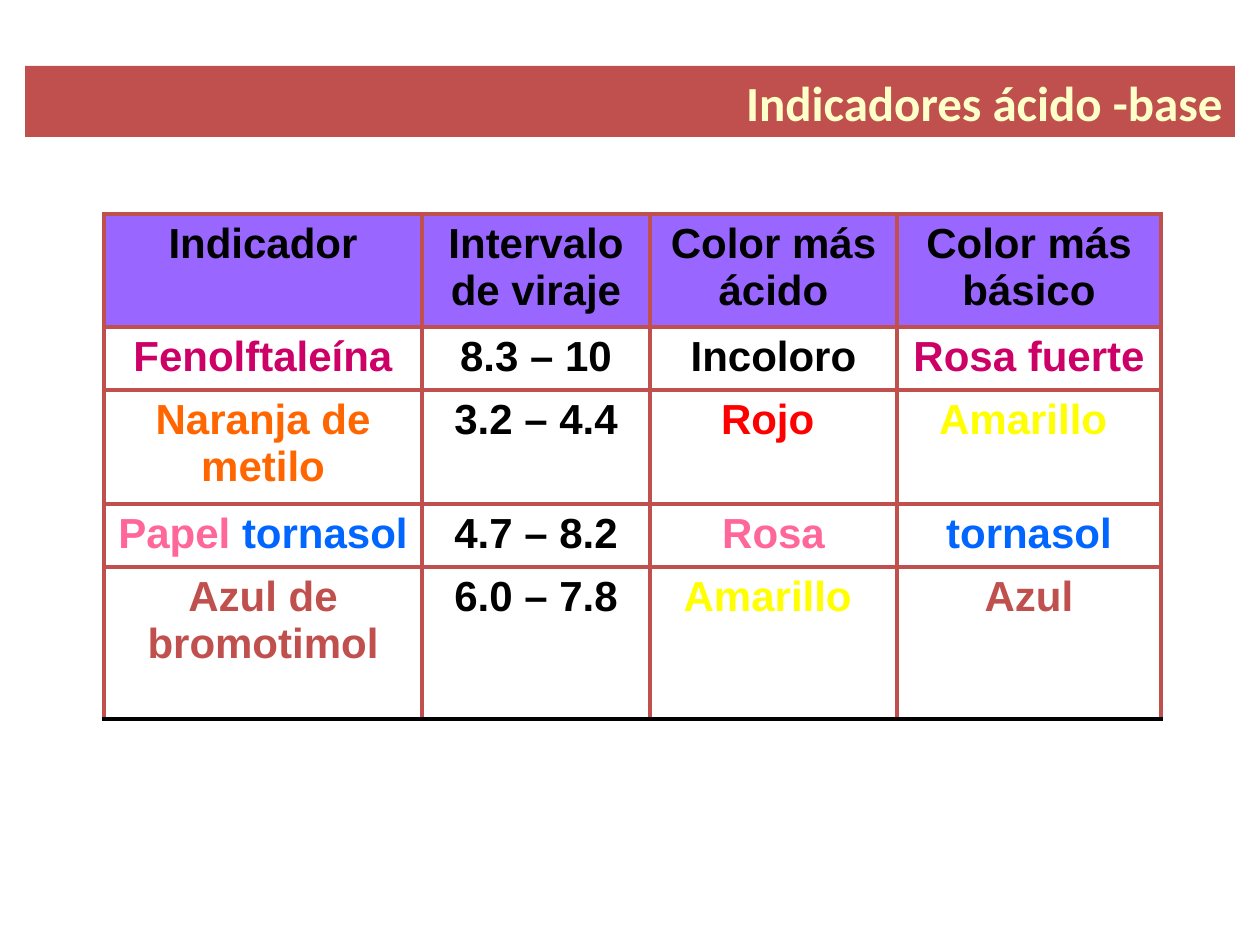
import pptx
import pptx.dml.color
import pptx.enum.text
import pptx.oxml.ns
import pptx.util
from lxml import etree

COLORS = {
    "brick": "C0504D", "cream": "FFFFC9", "violet": "9966FF", "white": "FFFFFF",
    "black": "000000", "magenta": "CC0066", "orange": "FF6600", "red": "FF0000",
    "yellow": "FFFF00", "pink": "FF6699", "blue": "0066FF",
}
PX_PER_INCH = 126
ALIGN = pptx.enum.text.PP_ALIGN


def px(n):
    return pptx.util.Emu(round(n * 914400 / PX_PER_INCH))


def rgb(name):
    return pptx.dml.color.RGBColor.from_string(COLORS[name])


class Deck:
    """Holds the style and the current slide."""
    title_font, title_size = "Calibri", 28
    table_font, table_size = "Arial", 24

    def __init__(self):
        self.prs = pptx.Presentation()
        self.prs.slide_width, self.prs.slide_height = px(1260), px(945)
        self.slide = self.prs.slides.add_slide(self.prs.slide_layouts[5])

    def format_run(self, r, font, size, color):
        r.font.name, r.font.size, r.font.bold = font, pptx.util.Pt(size), True
        r.font.color.rgb = rgb(color)

    def title(self, text, x, y, w, h):
        sp = self.slide.shapes.title
        sp.left, sp.top, sp.width, sp.height = px(x), px(y), px(w), px(h)
        sp.fill.solid()
        sp.fill.fore_color.rgb = rgb("brick")
        tf = sp.text_frame
        tf.text = text
        tf.word_wrap = True
        tf.auto_size = pptx.enum.text.MSO_AUTO_SIZE.NONE
        tf.vertical_anchor = pptx.enum.text.MSO_ANCHOR.MIDDLE
        p = tf.paragraphs[0]
        p.alignment = ALIGN.RIGHT
        self.format_run(p.runs[0], self.title_font, self.title_size, "cream")

    def border(self, cell, side, color, width):
        qn = pptx.oxml.ns.qn
        ln = etree.SubElement(cell._tc.get_or_add_tcPr(), qn("a:ln" + side),
                              w=str(pptx.util.Pt(width)))
        fill = etree.SubElement(ln, qn("a:solidFill"))
        etree.SubElement(fill, qn("a:srgbClr"), val=COLORS[color])

    def cell(self, cell, runs, fill, last):
        # Borders come before the fill in the cell properties
        for side in "LRTB":
            if last and side == "B":
                self.border(cell, side, "black", 2.25)
            else:
                self.border(cell, side, "brick", 3)
        cell.fill.solid()
        cell.fill.fore_color.rgb = rgb(fill)
        p = cell.text_frame.paragraphs[0]
        p.alignment = ALIGN.CENTER
        for text, color in runs:
            r = p.add_run()
            r.text = text
            self.format_run(r, self.table_font, self.table_size, color)

    def table(self, rows, x, y, widths, heights):
        table = self.slide.shapes.add_table(
            len(rows), len(widths), px(x), px(y),
            px(sum(widths)), px(sum(heights))).table
        table.horz_banding = False
        for col, w in zip(table.columns, widths):
            col.width = px(w)
        for row, h in zip(table.rows, heights):
            row.height = px(h)
        for i, row in enumerate(rows):
            for j, runs in enumerate(row):
                self.cell(table.cell(i, j), runs, "white" if i else "violet",
                          i == len(rows) - 1)


# Each cell is a list of (text, colour) runs
HEADERS = ["Indicador", "Intervalo de viraje", "Color más ácido", "Color más básico"]
INDICATORS = [
    [[("Fenolftaleína", "magenta")], [("8.3 – 10", "black")],
     [("Incoloro", "black")], [("Rosa fuerte", "magenta")]],
    [[("Naranja de metilo", "orange")], [("3.2 – 4.4", "black")],
     [("Rojo ", "red")], [("Amarillo ", "yellow")]],
    [[("Papel ", "pink"), ("tornasol", "blue")], [("4.7 – 8.2", "black")],
     [("Rosa", "pink")], [("tornasol", "blue")]],
    [[("Azul de bromotimol", "brick")], [("6.0 – 7.8", "black")],
     [("Amarillo ", "yellow")], [("Azul", "brick")]],
]


def main():
    deck = Deck()
    # Title bar
    deck.title("Indicadores ácido -base", 25, 66, 1210, 71)
    # Indicator table
    header = [[(text, "black")] for text in HEADERS]
    deck.table([header] + INDICATORS, 104, 214,
               [318, 228, 247, 264], [113, 63, 114, 63, 152])
    deck.prs.save("out.pptx")


if __name__ == "__main__":
    main()
